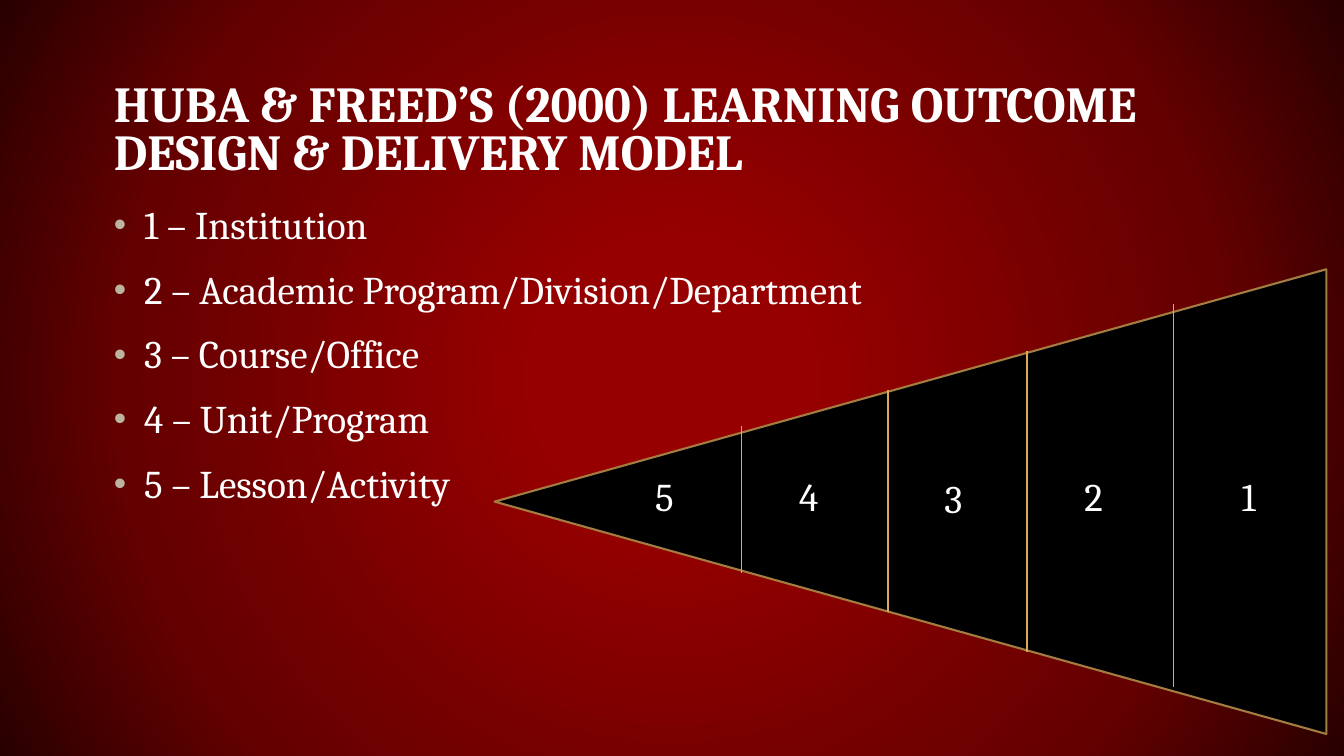
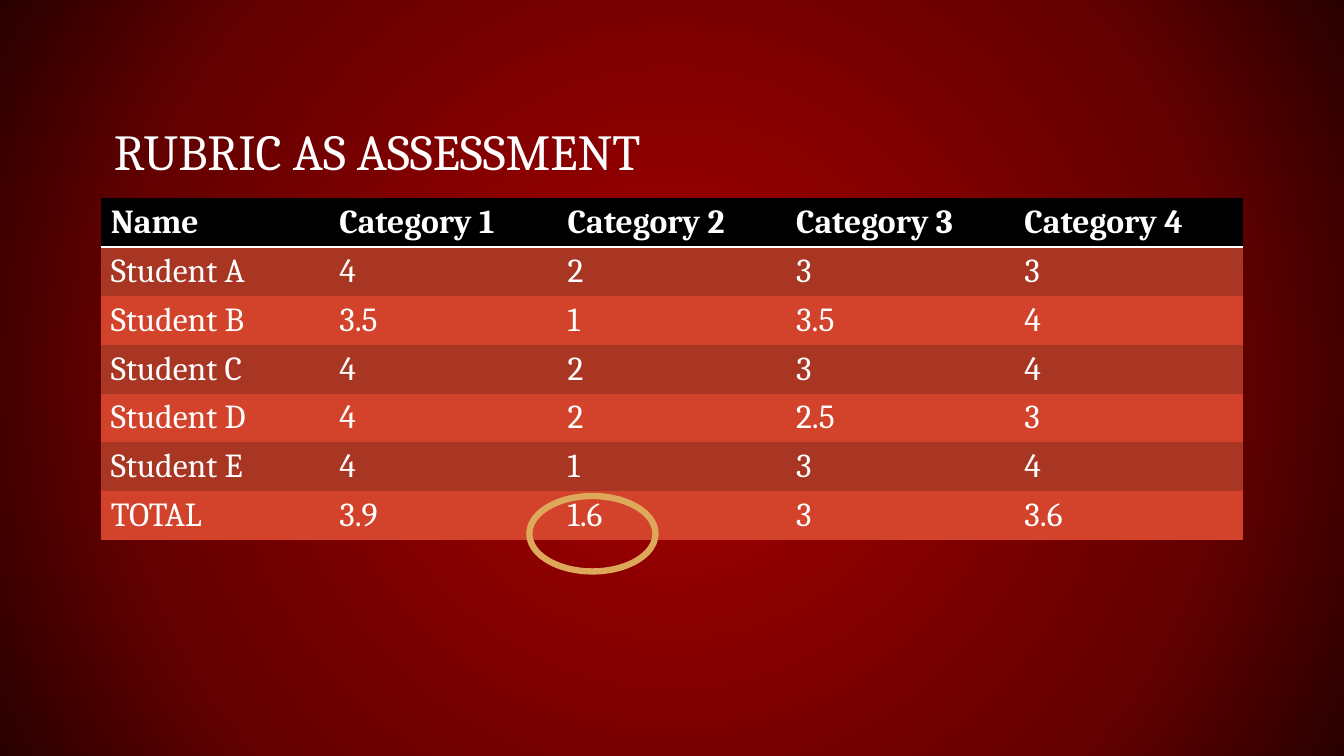
from lxml.etree import SubElement
from pptx import Presentation
from pptx.dml.color import RGBColor
from pptx.enum.shapes import MSO_CONNECTOR, MSO_SHAPE
from pptx.enum.text import MSO_ANCHOR, MSO_AUTO_SIZE, PP_ALIGN
from pptx.oxml import parse_xml
from pptx.oxml.ns import nsdecls, qn
from pptx.util import Cm, Pt

WHITE = RGBColor(0xFF, 0xFF, 0xFF)
BLACK = RGBColor(0x00, 0x00, 0x00)
GOLD = RGBColor(0xDD, 0xA8, 0x59)
BRONZE = RGBColor(0xA3, 0x7C, 0x42)
SAND = RGBColor(0xBC, 0xB4, 0x9E)
RUST = RGBColor(0xA9, 0x36, 0x22)
CORAL = RGBColor(0xD3, 0x43, 0x2B)
GLOW = (
    (17, RGBColor(0x96, 0x00, 0x00)),
    (71, RGBColor(0x65, 0x00, 0x00)),
    (100, RGBColor(0x29, 0x00, 0x00)),
)
FONT = "Cambria"
NO_STYLE = "{2D5ABB26-0587-4C30-8999-92F81FD0307C}"
LEFT, WIDTH, TOP = 2.54, 28.78, 5

LEVELS = (
    "1 – Institution",
    "2 – Academic Program/Division/Department",
    "3 – Course/Office",
    "4 – Unit/Program",
    "5 – Lesson/Activity",
)
CUTS = (
    (29.57, 7.65, 17.32),
    (25.88, 8.84, 16.43),
    (22.38, 9.83, 15.42),
    (18.69, 10.74, 14.43),
)
MARKS = (
    ("1", 31.04, 11.91),
    ("2", 27.08, 11.91),
    ("3", 23.55, 11.96),
    ("4", 19.89, 11.91),
    ("5", 16.26, 11.91),
)
SCORES = (
    ("Name", "Category 1", "Category 2", "Category 3", "Category 4"),
    ("Student A", "4", "2", "3", "3"),
    ("Student B", "3.5", "1", "3.5", "4"),
    ("Student C", "4", "2", "3", "4"),
    ("Student D", "4", "2", "2.5", "3"),
    ("Student E", "4", "1", "3", "4"),
    ("TOTAL", "3.9", "1.6", "3", "3.6"),
)


def place(shape, left, top, width, height):
    shape.left, shape.top = Cm(left), Cm(top)
    shape.width, shape.height = Cm(width), Cm(height)


def write(par, text, size=28, bold=False, lead=None, gap=0):
    par.alignment = PP_ALIGN.LEFT
    par.space_before = Pt(gap)
    if lead:
        par.line_spacing = lead
    run = par.add_run()
    run.text = text
    font = run.font
    font.name, font.size, font.bold = FONT, Pt(size), bold
    font.color.rgb = WHITE


def paint(master):
    master.background.fill.solid()
    solid = master.element.find(".//" + qn("p:bgPr")).find(qn("a:solidFill"))
    stops = "".join(
        f'<a:gs pos="{spot * 1000}"><a:srgbClr val="{shade}"/></a:gs>'
        for spot, shade in GLOW
    )
    solid.getparent().replace(solid, parse_xml(
        f'<a:gradFill {nsdecls("a")} rotWithShape="1"><a:gsLst>{stops}</a:gsLst>'
        '<a:path path="circle"><a:fillToRect l="50000" t="50000" r="50000" b="50000"/>'
        "</a:path></a:gradFill>"
    ))


def set_frame(frame, anchor):
    frame.word_wrap = True
    frame.auto_size = MSO_AUTO_SIZE.NONE
    frame.vertical_anchor = anchor
    frame.margin_left = frame.margin_right = Cm(0.33)
    frame.margin_top = frame.margin_bottom = Cm(0.18)


def add_page(deck, layout, title, bold=False):
    slide = deck.slides.add_slide(deck.slide_layouts.get_by_name(layout))
    head = slide.shapes.title
    place(head, LEFT, 1.35, WIDTH, 3.38)
    set_frame(head.text_frame, MSO_ANCHOR.BOTTOM)
    write(head.text_frame.paragraphs[0], title, size=36, bold=bold, lead=0.8)
    return slide


def add_dot(par):
    props = par._p.get_or_add_pPr()
    props.set("marL", str(Cm(0.76)))
    props.set("indent", str(Cm(-0.76)))
    tint = SubElement(props, qn("a:buClr"))
    SubElement(tint, qn("a:srgbClr"), val=str(SAND))
    SubElement(props, qn("a:buSzPct"), val="90000")
    SubElement(props, qn("a:buFont"), typeface="Arial")
    SubElement(props, qn("a:buChar"), char="•")


def fill_list(body, items):
    place(body, LEFT, TOP, WIDTH, 12.42)
    frame = body.text_frame
    set_frame(frame, MSO_ANCHOR.TOP)
    for index, item in enumerate(items):
        par = frame.add_paragraph() if index else frame.paragraphs[0]
        write(par, item, lead=0.9, gap=16)
        add_dot(par)


def add_form(shapes, kind, box, line, weight, fill=None):
    form = shapes.add_shape(kind, *map(Cm, box))
    form.shadow.inherit = False
    if fill is None:
        form.fill.background()
    else:
        form.fill.solid()
        form.fill.fore_color.rgb = fill
    form.line.color.rgb = line
    form.line.width = Pt(weight)
    return form


def add_cut(shapes, left, top, base):
    cut = shapes.add_connector(
        MSO_CONNECTOR.STRAIGHT, Cm(left), Cm(top), Cm(left), Cm(base)
    )
    cut.line.color.rgb = GOLD
    cut.line.width = Pt(1)
    SubElement(cut._element.spPr, qn("a:effectLst"))


def add_mark(shapes, text, left, top):
    box = shapes.add_textbox(Cm(left), Cm(top), Cm(1.07), Cm(1.35))
    frame = box.text_frame
    frame.word_wrap = False
    frame.auto_size = MSO_AUTO_SIZE.SHAPE_TO_FIT_TEXT
    write(frame.paragraphs[0], text, lead=0.9)


def add_rule(cell):
    props = cell._tc.get_or_add_tcPr()
    props.insert(0, parse_xml(
        f'<a:lnB {nsdecls("a")} w="{Pt(2)}"><a:solidFill>'
        f'<a:srgbClr val="{WHITE}"/></a:solidFill></a:lnB>'
    ))


def add_grid(shapes, rows):
    high = 1.23
    table = shapes.add_table(
        len(rows), len(rows[0]), Cm(LEFT), Cm(TOP), Cm(WIDTH), Cm(high * len(rows))
    ).table
    table._tbl.tblPr.find(qn("a:tableStyleId")).text = NO_STYLE
    for r, row in enumerate(rows):
        table.rows[r].height = Cm(high)
        for c, text in enumerate(row):
            cell = table.cell(r, c)
            cell.fill.solid()
            cell.fill.fore_color.rgb = (CORAL, RUST)[r % 2] if r else BLACK
            write(cell.text_frame.paragraphs[0], text, size=24, bold=r == 0)
            if r == 0:
                add_rule(cell)


def add_model(deck):
    slide = add_page(
        deck, "Title and Content",
        "HUBA & FREED’S (2000) LEARNING OUTCOME DESIGN & DELIVERY MODEL", bold=True,
    )
    fill_list(slide.placeholders[1], LEVELS)
    group = slide.shapes.add_group_shape().shapes
    cone = add_form(
        group, MSO_SHAPE.ISOSCELES_TRIANGLE, (17.09, 2.16, 11.71, 20.96),
        BRONZE, 1.5, fill=BLACK,
    )
    cone.rotation = 270
    for cut in CUTS:
        add_cut(group, *cut)
    for mark in MARKS:
        add_mark(slide.shapes, *mark)


def add_rubric(deck):
    slide = add_page(deck, "Title Only", "RUBRIC AS ASSESSMENT")
    add_grid(slide.shapes, SCORES)
    add_form(slide.shapes, MSO_SHAPE.OVAL, (13.34, 12.5, 3.18, 1.9), GOLD, 4.5)


def main():
    deck = Presentation()
    deck.slide_width, deck.slide_height = Cm(33.87), Cm(19.05)
    paint(deck.slide_master)
    add_model(deck)
    add_rubric(deck)
    deck.save("out.pptx")


if __name__ == "__main__":
    main()
